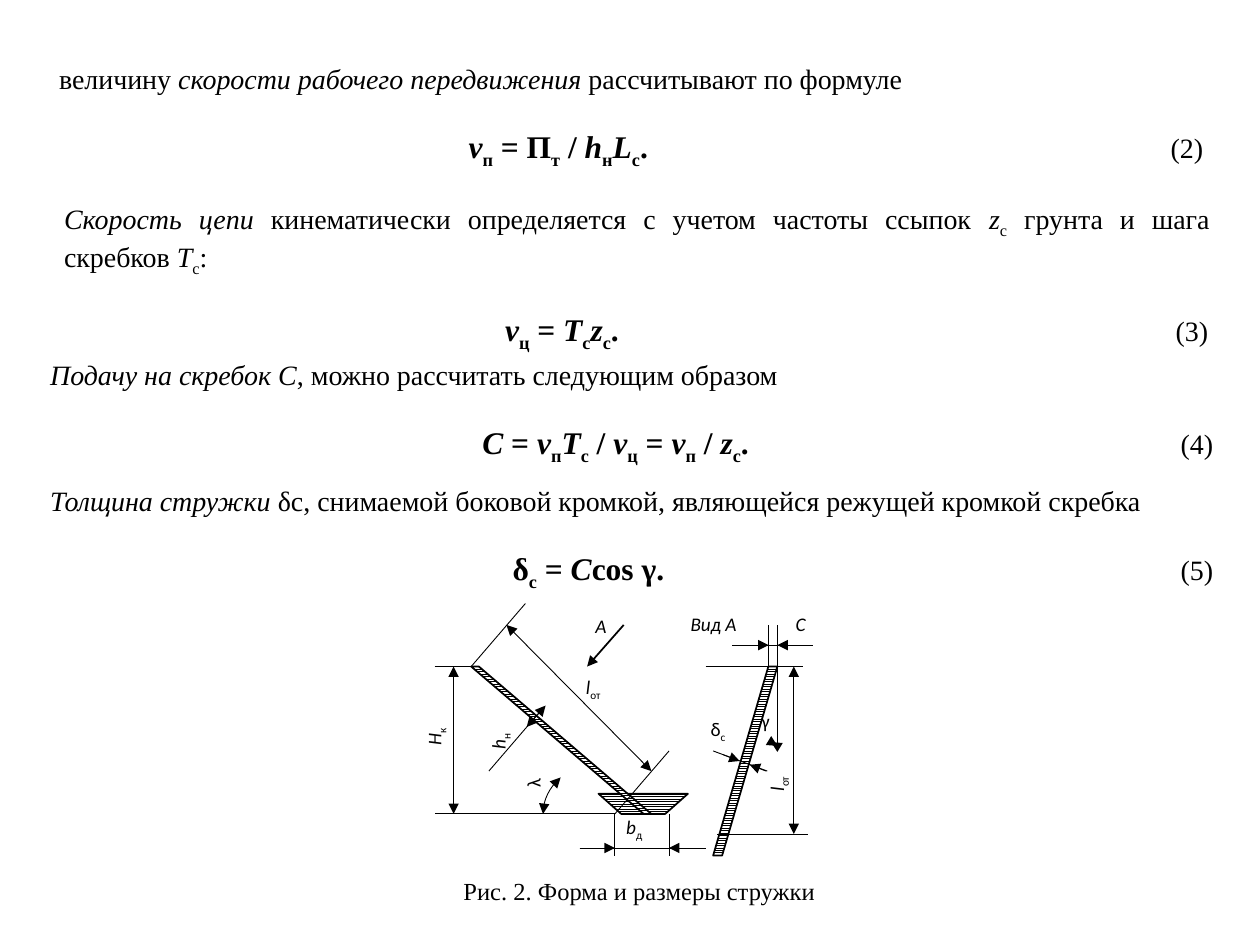
from lxml.etree import SubElement
from pptx import Presentation
from pptx.dml.color import RGBColor
from pptx.enum.dml import MSO_PATTERN
from pptx.enum.shapes import MSO_CONNECTOR, MSO_SHAPE
from pptx.enum.text import PP_ALIGN
from pptx.oxml.ns import qn
from pptx.util import Inches, Pt

BLACK = RGBColor(0, 0, 0)
WHITE = RGBColor(255, 255, 255)
SERIF = "Times New Roman"
SANS = "Calibri"
THIN, HEAVY = 0.5, 1
FORMULA_GAP = 18.4

STATEMENTS = [
    (0.37, 0.44, 9.29, 0.94,
     "величину *скорости рабочего передвижения* рассчитывают по формуле",
     "*v*_п_ = П_т_ / *h*_н_*L*_с_.", 3.25, "(2)"),
    (0.41, 1.55, 9.29, 1.21,
     "*Скорость цепи* кинематически определяется с учетом частоты ссыпок "
     "*z*_с_ грунта и шага скребков *Т*_с_:",
     "*v*_ц_ = *Т*_с_*z*_с_.", 3.5, "(3)"),
    (0.3, 2.79, 9.44, 0.94,
     "*Подачу на скребок С*, можно рассчитать следующим образом",
     "*С* = *v*_п_*Т*_с_ / *v*_ц_ = *v*_п_ / *z*_c_.", 3.43, "(4)"),
    (0.3, 3.79, 9.44, 0.94,
     "*Толщина стружки* δс, снимаемой боковой кромкой, являющейся режущей кромкой скребка",
     "δ_с_ = *С*соs γ.", 3.67, "(5)"),
]

SURFACE_LINES = [(5.6, 5.29, 6.37, 5.29), (3.45, 5.29, 3.74, 5.29)]
EXTENSION_LINES = [
    (6.1, 5.29, 6.1, 4.96), (6.17, 5.29, 6.17, 4.96),
    (3.74, 5.29, 4.17, 4.79), (4.88, 6.46, 5.31, 5.96),
    (4.88, 6.46, 4.88, 6.79), (5.31, 6.46, 5.31, 6.79),
    (4.6, 6.73, 5.6, 6.73), (3.88, 6.12, 4.31, 5.62),
    (5.88, 5.12, 6.45, 5.12), (6.17, 5.29, 6.17, 5.96),
    (4.88, 6.46, 3.45, 6.46), (6.41, 6.62, 5.69, 6.62),
    (5.66, 5.96, 6.09, 6.12),
]
DIMENSIONS = [
    (4.02, 4.96, 5.17, 6.12), (4.33, 5.6, 4.18, 5.77),
    (3.6, 5.29, 3.6, 6.46), (6.3, 5.29, 6.3, 6.62),
]
POINTERS = [
    (6.08, 6.12, 5.95, 6.07), (5.74, 5.99, 5.87, 6.04),
    (5.81, 5.12, 6.1, 5.12), (6.45, 5.12, 6.17, 5.12),
    (4.6, 6.73, 4.88, 6.73), (5.6, 6.73, 5.31, 6.73),
]
VIEW_DIRECTION = (4.95, 4.96, 4.66, 5.29)
PAN_OUTLINE = [(4.75, 6.3), (4.93, 6.46), (5.28, 6.46), (5.46, 6.3)]
ANGLE_ARCS = [
    [(4.31, 6.46), (4.31, 6.35), (4.36, 6.25), (4.45, 6.17)],
    [(6.17, 5.92), (6.15, 5.92), (6.13, 5.91), (6.12, 5.89)],
]

LEVEL_LABELS = [
    (4.88, 6.4, 0.43, 0.5, "*b*_д_"),
    (5.95, 5.56, 0.29, 0.39, "γ"),
    (5.55, 5.62, 0.43, 0.5, "δ_с_"),
    (4.56, 5.29, 0.43, 0.5, "*l*_от_"),
    (5.39, 4.79, 0.71, 0.44, "*Вид А*"),
]
CENTRED_LABELS = [
    (6.17, 4.79, 0.37, 0.33, "*С*"),
    (4.59, 4.81, 0.36, 0.42, "*А*"),
]
UPRIGHT_LABELS = [
    (3.23, 5.46, 0.43, 0.5, "*Н*_к_"),
    (4.02, 5.92, 0.43, 0.37, "λ"),
    (3.74, 5.66, 0.43, 0.33, "*h*_н_"),
    (5.95, 5.84, 0.46, 0.48, "*l*_от_"),
]


def add_rich_text(paragraph, markup, size, font=SERIF, bold=False):
    for i, phrase in enumerate(markup.split("*")):
        for j, piece in enumerate(phrase.split("_")):
            if not piece:
                continue
            run = paragraph.add_run()
            run.text = piece
            run.font.name = font
            run.font.size = Pt(size)
            run.font.bold = bold
            run.font.italic = i % 2 == 1
            run.font.color.rgb = BLACK
            if j % 2:
                run.font._element.set("baseline", "-25000")


def add_text_frame(shapes, left, top, width, height, wrap=True):
    frame = shapes.add_textbox(*map(Inches, (left, top, width, height))).text_frame
    frame.word_wrap = wrap
    return frame


def set_tabs(paragraph, stops):
    tab_list = SubElement(paragraph._p.get_or_add_pPr(), qn("a:tabLst"))
    for position, align in stops:
        SubElement(tab_list, qn("a:tab"), pos=str(Inches(position)), algn=align)


def add_statement(shapes, left, top, width, height, sentence, formula, indent, number):
    frame = add_text_frame(shapes, left, top, width, height)
    intro = frame.paragraphs[0]
    intro.alignment = PP_ALIGN.JUSTIFY
    add_rich_text(intro, sentence, 16)
    equation = frame.add_paragraph()
    equation.alignment = PP_ALIGN.LEFT
    equation.space_before = Pt(FORMULA_GAP)
    set_tabs(equation, [(indent, "l"), (width - 0.21, "r")])
    add_rich_text(equation, "\t" + formula, 18, bold=True)
    add_rich_text(equation, "\t" + number, 16)


def add_label(shapes, left, top, width, height, markup, align=PP_ALIGN.LEFT, upright=False):
    frame = add_text_frame(shapes, left, top, width, height)
    frame.margin_left = frame.margin_right = Inches(0.09)
    frame.margin_top = frame.margin_bottom = Inches(0.04)
    if upright:
        frame._txBody.bodyPr.set("vert", "vert270")
    paragraph = frame.paragraphs[0]
    paragraph.alignment = align
    paragraph.line_spacing = 1.15
    paragraph.space_after = Pt(10)
    add_rich_text(paragraph, markup, 11, SANS)


def style_line(shape, weight, ends=()):
    shape.line.color.rgb = BLACK
    shape.line.width = Pt(weight)
    outline = shape._element.spPr.find(qn("a:ln"))
    for end in ends:
        SubElement(outline, qn("a:" + end), type="triangle")


def add_line(shapes, ends_at, weight=THIN, ends=()):
    line = shapes.add_connector(MSO_CONNECTOR.STRAIGHT, *map(Inches, ends_at))
    style_line(line, weight, ends)
    SubElement(line._element.spPr, qn("a:effectLst"))


def hatch(shape):
    shape.shadow.inherit = False
    shape.fill.patterned()
    shape.fill.pattern = MSO_PATTERN.LIGHT_HORIZONTAL
    shape.fill.fore_color.rgb = BLACK
    shape.fill.back_color.rgb = WHITE
    style_line(shape, HEAVY)


def add_strip(shapes, left, top, width, height, slant, mirrored=False):
    strip = shapes.add_shape(MSO_SHAPE.PARALLELOGRAM, *map(Inches, (left, top, width, height)))
    strip.adjustments[0] = slant
    if mirrored:
        strip._element.spPr.find(qn("a:xfrm")).set("flipH", "1")
    hatch(strip)


def add_outline(shapes, points, closed):
    start, *rest = [(Inches(x), Inches(y)) for x, y in points]
    builder = shapes.build_freeform(*start)
    builder.add_line_segments(rest, close=closed)
    return builder.convert_to_shape()


def curve_points(controls, steps=8):
    points = []
    for t in (step / steps for step in range(steps + 1)):
        weights = ((1 - t) ** 3, 3 * t * (1 - t) ** 2, 3 * t * t * (1 - t), t ** 3)
        points.append(tuple(sum(w * c for w, c in zip(weights, axis)) for axis in zip(*controls)))
    return points


def add_arc(shapes, controls):
    arc = add_outline(shapes, curve_points(controls), closed=False)
    arc.shadow.inherit = False
    arc.fill.background()
    style_line(arc, THIN, ("headEnd", "tailEnd"))


def draw_chip_diagram(shapes):
    add_strip(shapes, 5.66, 5.29, 0.51, 1.5, 0.86)
    hatch(add_outline(shapes, PAN_OUTLINE, closed=True))
    add_strip(shapes, 3.74, 5.29, 1.43, 1.17, 1.17, mirrored=True)
    for line in SURFACE_LINES:
        add_line(shapes, line, HEAVY)
    for line in EXTENSION_LINES:
        add_line(shapes, line)
    for line in DIMENSIONS:
        add_line(shapes, line, ends=("headEnd", "tailEnd"))
    for line in POINTERS:
        add_line(shapes, line, ends=("tailEnd",))
    add_line(shapes, VIEW_DIRECTION, HEAVY, ("tailEnd",))
    for controls in ANGLE_ARCS:
        add_arc(shapes, controls)
    for label in LEVEL_LABELS:
        add_label(shapes, *label)
    for label in CENTRED_LABELS:
        add_label(shapes, *label, align=PP_ALIGN.CENTER)
    for label in UPRIGHT_LABELS:
        add_label(shapes, *label, upright=True)


def main():
    deck = Presentation()
    deck.slide_width, deck.slide_height = Inches(10), Inches(7.5)
    slide = deck.slides.add_slide(deck.slide_layouts[6])
    for statement in STATEMENTS:
        add_statement(slide.shapes, *statement)
    caption = add_text_frame(slide.shapes, 3.58, 6.9, 3.01, 0.34, wrap=False)
    add_rich_text(caption.paragraphs[0], "Рис. 2. Форма и размеры стружки", 14)
    draw_chip_diagram(slide.shapes.add_group_shape().shapes)
    deck.save("out.pptx")


if __name__ == "__main__":
    main()
